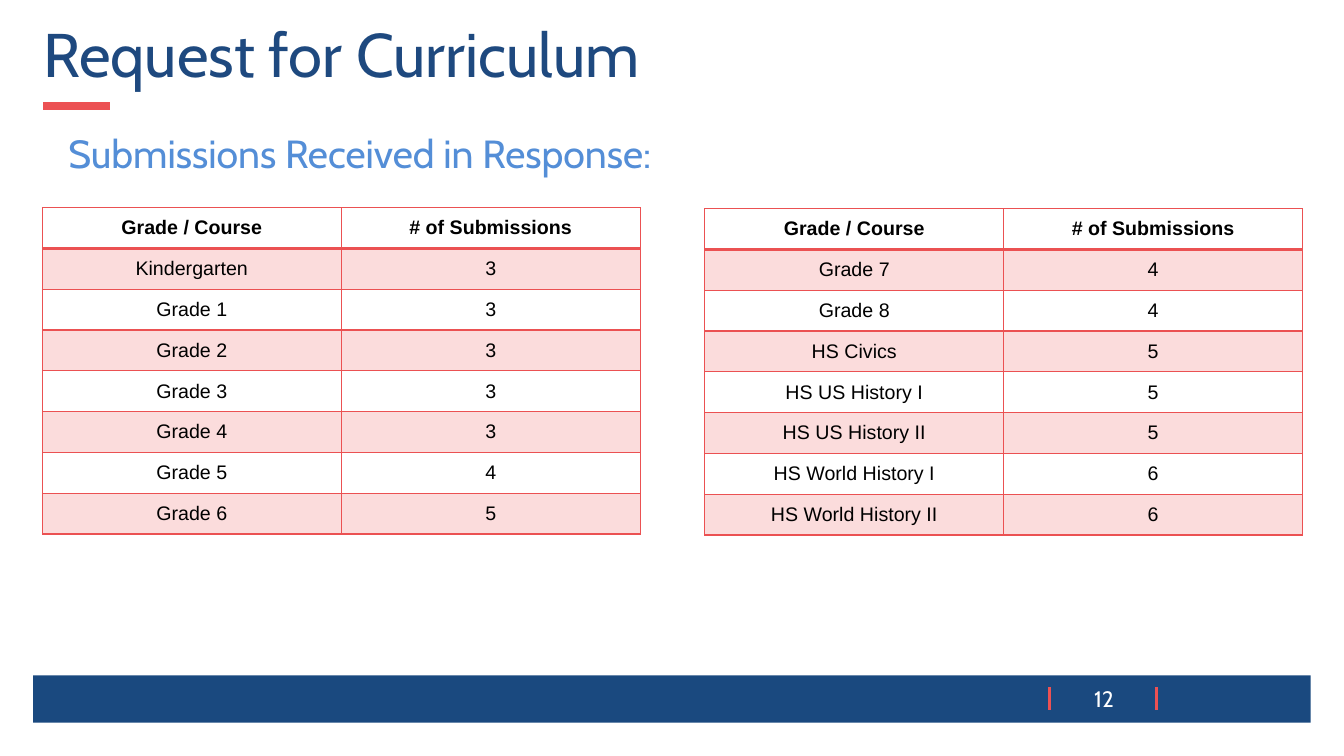
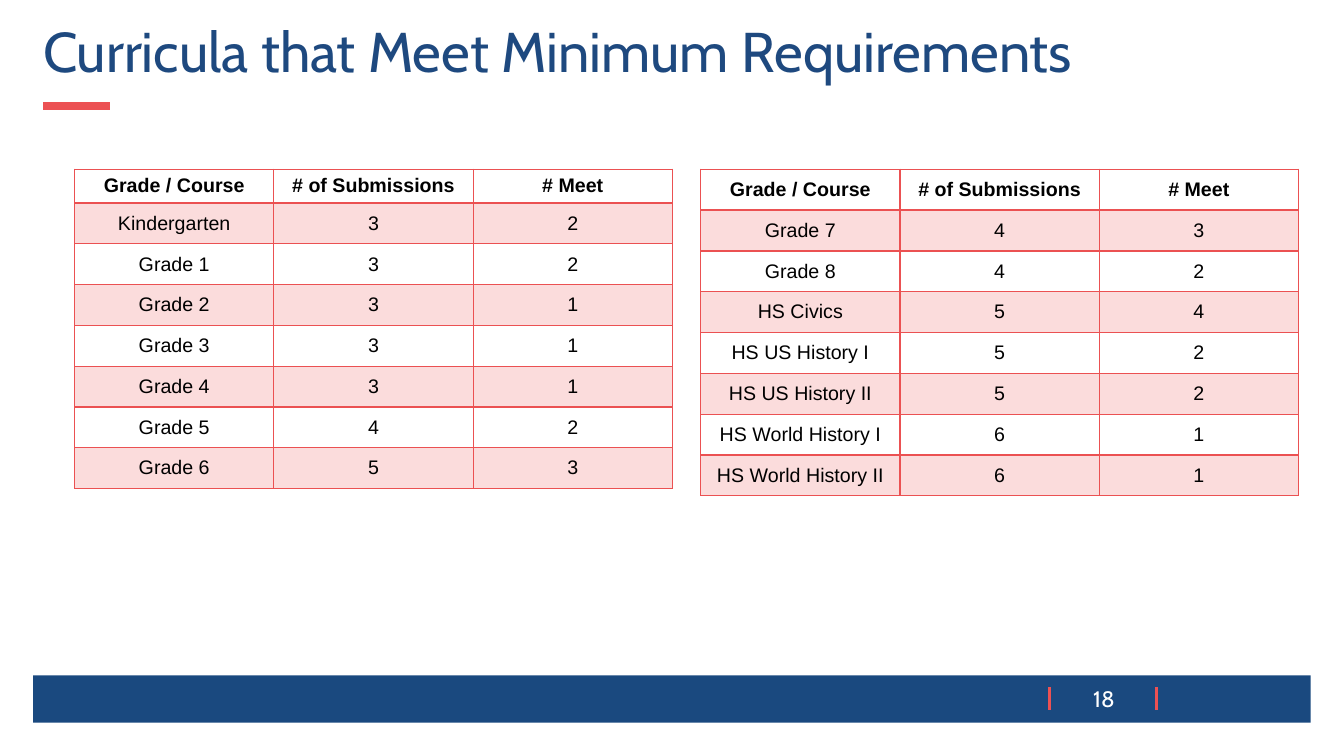
from dataclasses import dataclass
from typing import Optional

from lxml.etree import SubElement
from pptx import Presentation
from pptx.dml.color import RGBColor
from pptx.enum.shapes import MSO_CONNECTOR, MSO_SHAPE
from pptx.enum.text import MSO_ANCHOR, PP_ALIGN
from pptx.oxml.ns import qn
from pptx.slide import Slide
from pptx.table import _Cell
from pptx.text.text import _Paragraph
from pptx.util import Inches, Pt

NAVY = "1A497F"
TITLE_BLUE = "1E497F"
SUBTITLE_BLUE = "548ED7"
ACCENT_RED = "EC5153"
TABLE_RED = "EB5152"
BLACK = "000000"
WHITE = "FFFFFF"
HEADING_FONT = "Cabin"
TABLE_FONT = "Arial"

TABLE_WIDTH = 5.93
ROW_HEIGHT = 3.24 / 8
HEADERS = ("Grade / Course", "# of Submissions", "# Meet")


@dataclass(frozen=True)
class Course:
    name: str
    submissions: int
    meeting: int


@dataclass(frozen=True)
class CourseTable:
    left: float
    top: float
    courses: tuple[Course, ...]
    columns: int
    header_height: float = ROW_HEIGHT


@dataclass(frozen=True)
class Page:
    number: int
    title: str
    title_size: int
    tables: tuple[CourseTable, ...]
    subtitle: Optional[str] = None


ELEMENTARY = (
    Course("Kindergarten", 3, 2),
    Course("Grade 1", 3, 2),
    Course("Grade 2", 3, 1),
    Course("Grade 3", 3, 1),
    Course("Grade 4", 3, 1),
    Course("Grade 5", 4, 2),
    Course("Grade 6", 5, 3),
)
SECONDARY = (
    Course("Grade 7", 4, 3),
    Course("Grade 8", 4, 2),
    Course("HS Civics", 5, 4),
    Course("HS US History I", 5, 2),
    Course("HS US History II", 5, 2),
    Course("HS World History I", 6, 1),
    Course("HS World History II", 6, 1),
)

PAGES = (
    Page(12, "Request for Curriculum", 44,
         (CourseTable(0.42, 2.06, ELEMENTARY, 2),
          CourseTable(6.99, 2.07, SECONDARY, 2)),
         "Submissions Received in Response:"),
    Page(18, "Curricula that Meet Minimum Requirements", 40,
         (CourseTable(0.74, 1.68, ELEMENTARY, 3, header_height=0.32),
          CourseTable(6.95, 1.68, SECONDARY, 3))),
)


def rgb(hex_colour: str) -> RGBColor:
    return RGBColor.from_string(hex_colour)


def add_run(paragraph: _Paragraph, text: str, size: float, colour: str,
            font: str, bold: bool = False) -> None:
    run = paragraph.add_run()
    run.text = text
    run.font.name = font
    run.font.size = Pt(size)
    run.font.bold = bold
    run.font.color.rgb = rgb(colour)


def add_heading_text(slide: Slide, left: float, top: float, width: float,
                     height: float, text: str, size: float, colour: str,
                     anchor: MSO_ANCHOR = MSO_ANCHOR.TOP) -> _Paragraph:
    """Add a one-paragraph box in the heading font and return the paragraph."""
    box = slide.shapes.add_textbox(Inches(left), Inches(top), Inches(width), Inches(height))
    box.text_frame.word_wrap = True
    box.text_frame.vertical_anchor = anchor
    paragraph = box.text_frame.paragraphs[0]
    add_run(paragraph, text, size, colour, HEADING_FONT)
    return paragraph


def add_accent_line(slide: Slide, x1: float, y1: float, x2: float, y2: float,
                    weight: float) -> None:
    line = slide.shapes.add_connector(
        MSO_CONNECTOR.STRAIGHT, Inches(x1), Inches(y1), Inches(x2), Inches(y2))
    line.line.color.rgb = rgb(ACCENT_RED)
    line.line.width = Pt(weight)
    SubElement(line._element.spPr, qn("a:effectLst"))


def add_frame(slide: Slide, page: Page) -> None:
    """Draw the title with its accent, and the footer band with the page number."""
    add_accent_line(slide, 0.43, 1.05, 1.09, 1.05, 6)
    band = slide.shapes.add_shape(
        MSO_SHAPE.RECTANGLE, Inches(0.33), Inches(6.7), Inches(12.67), Inches(0.47))
    band.shadow.inherit = False
    band.fill.solid()
    band.fill.fore_color.rgb = rgb(NAVY)
    band.line.fill.background()
    for x in (10.41, 11.47):
        add_accent_line(slide, x, 6.82, x, 7.04, 2.25)

    title = add_heading_text(slide, 0.33, 0.19, 12.67, 0.77, page.title,
                             page.title_size, TITLE_BLUE)
    title.line_spacing = 0.9
    number = add_heading_text(slide, 10.63, 6.75, 0.64, 0.37, str(page.number),
                              16, WHITE, MSO_ANCHOR.MIDDLE)
    number.alignment = PP_ALIGN.CENTER


def add_subtitle(slide: Slide, text: str) -> None:
    subtitle = add_heading_text(slide, 0.33, 1.13, 12.67, 0.93, text, 28, SUBTITLE_BLUE)
    subtitle.line_spacing = 1.23
    properties = subtitle._p.get_or_add_pPr()
    properties.set("marL", str(Inches(0.5)))
    properties.set("indent", str(Inches(-0.25)))


def tint_cell(cell: _Cell) -> None:
    """Fill the cell with the table red at 20 percent opacity."""
    cell.fill.solid()
    cell.fill.fore_color.rgb = rgb(TABLE_RED)
    colour = cell._tc.tcPr.find(qn("a:solidFill")).find(qn("a:srgbClr"))
    SubElement(colour, qn("a:alpha")).set("val", "20000")


def add_borders(cell: _Cell, top: float, bottom: float) -> None:
    properties = cell._tc.get_or_add_tcPr()
    weights = {"a:lnL": 1, "a:lnR": 1, "a:lnT": top, "a:lnB": bottom}
    for position, (side, weight) in enumerate(weights.items()):
        border = SubElement(properties, qn(side))
        border.set("w", str(Pt(weight)))
        fill = SubElement(border, qn("a:solidFill"))
        SubElement(fill, qn("a:srgbClr")).set("val", TABLE_RED)
        properties.insert(position, border)


def add_course_table(slide: Slide, spec: CourseTable) -> None:
    body = [(course.name, str(course.submissions), str(course.meeting))
            for course in spec.courses]
    rows = [HEADERS, *body]
    height = spec.header_height + ROW_HEIGHT * len(body)
    table = slide.shapes.add_table(
        len(rows), spec.columns, Inches(spec.left), Inches(spec.top),
        Inches(TABLE_WIDTH), Inches(height)).table
    table.first_row = True
    table.horz_banding = False
    for column in table.columns:
        column.width = Inches(TABLE_WIDTH / spec.columns)

    for row_index, values in enumerate(rows):
        is_header = row_index == 0
        table.rows[row_index].height = Inches(spec.header_height if is_header else ROW_HEIGHT)
        for column_index, value in enumerate(values[:spec.columns]):
            cell = table.cell(row_index, column_index)
            cell.vertical_anchor = MSO_ANCHOR.MIDDLE
            if row_index % 2:
                tint_cell(cell)
            else:
                cell.fill.background()
            add_borders(cell, top=2 if row_index == 1 else 1, bottom=2 if is_header else 1)
            paragraph = cell.text_frame.paragraphs[0]
            paragraph.alignment = PP_ALIGN.CENTER
            add_run(paragraph, value, 14, BLACK, TABLE_FONT, bold=is_header)


def main() -> None:
    presentation = Presentation()
    presentation.slide_width = Inches(13.33)
    presentation.slide_height = Inches(7.5)
    blank = presentation.slide_layouts[6]
    for page in PAGES:
        slide = presentation.slides.add_slide(blank)
        add_frame(slide, page)
        if page.subtitle:
            add_subtitle(slide, page.subtitle)
        for spec in page.tables:
            add_course_table(slide, spec)
    presentation.save("out.pptx")


if __name__ == "__main__":
    main()
